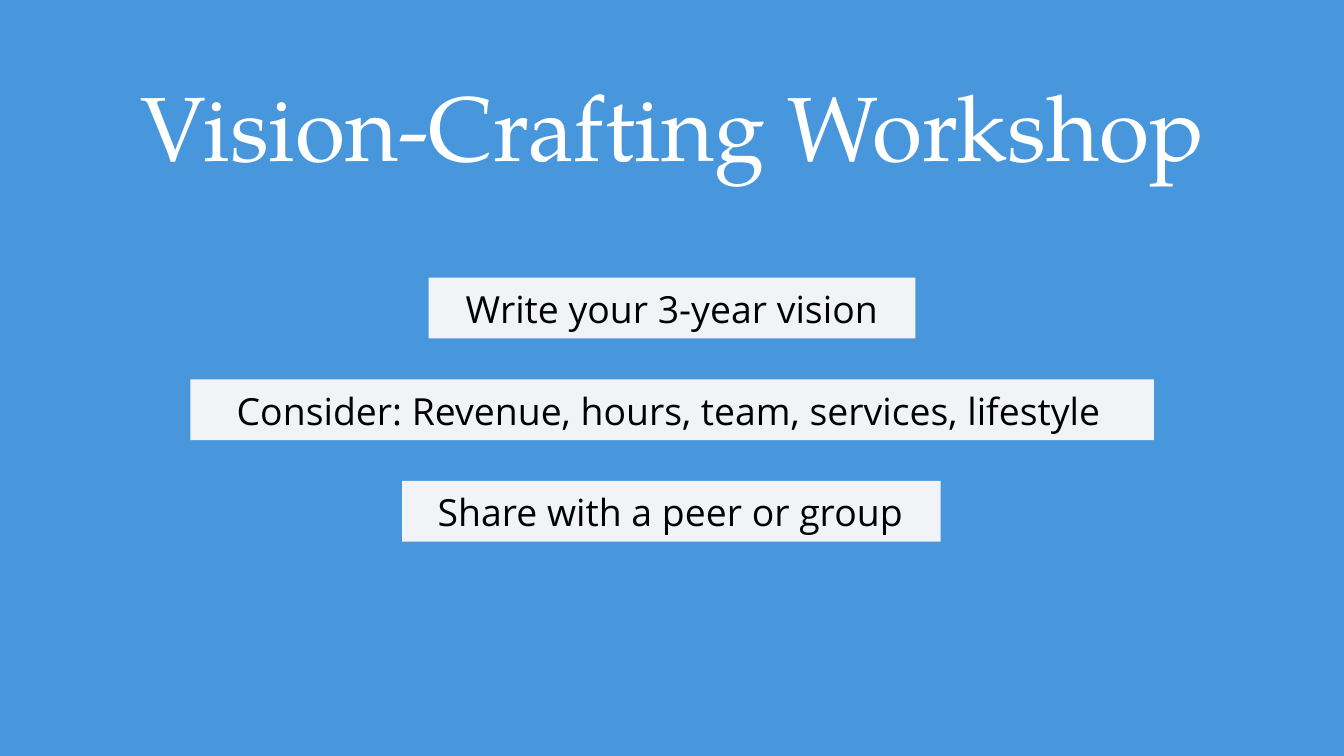
from dataclasses import dataclass

from pptx import Presentation
from pptx import util as u
from pptx.dml.color import RGBColor
from pptx.enum import shapes, text


@dataclass(frozen=True)
class Theme:
    blue: RGBColor = RGBColor(0x48, 0x97, 0xDD)
    bar: RGBColor = RGBColor(0xF1, 0xF3, 0xF7)
    white: RGBColor = RGBColor(0xFF, 0xFF, 0xFF)
    black: RGBColor = RGBColor(0, 0, 0)
    title_font: str = "TeX Gyre Pagella"
    body_font: str = "Open Sans"
    title_size: int = 49
    body_size: float = 20


THEME = Theme()
TITLE_STYLE = {"name": THEME.title_font, "size": u.Pt(THEME.title_size)}
BODY_STYLE = {"name": THEME.body_font, "size": u.Pt(THEME.body_size)}

BAR_TOP, BAR_PITCH, BAR_HEIGHT = 5.25, 1.92, 1.15
LABEL_OFFSET, LABEL_HEIGHT = 0.19, 0.79

# Each step: wording, (bar left, bar width), (label left, label width)
STEPS = [
    ("Write your 3-year vision", (8.1, 9.2), (7.77, 9.86)),
    ("Consider: Revenue, hours, team, services, lifestyle", (3.6, 18.21), (3.6, 18.08)),
    ("Share with a peer or group", (7.6, 10.18), (5.42, 14.5)),
]


def add_rectangle(slide, left, top, width, height, color):
    shape = slide.shapes.add_shape(
        shapes.MSO_SHAPE.RECTANGLE, *map(u.Cm, (left, top, width, height)))
    shape.shadow.inherit = False
    shape.fill.solid()
    shape.fill.fore_color.rgb = color
    shape.line.fill.background()


def add_centred_text(slide, left, top, width, height, words, style, color, anchor):
    box = slide.shapes.add_textbox(*map(u.Cm, (left, top, width, height)))
    frame = box.text_frame
    frame_format = {"word_wrap": True, "vertical_anchor": anchor}
    for side in ("left", "top", "right", "bottom"):
        frame_format[f"margin_{side}"] = u.Cm(0.25)
    for name, value in frame_format.items():
        setattr(frame, name, value)
    paragraph = frame.paragraphs[0]
    paragraph.alignment = text.PP_ALIGN.CENTER
    run = paragraph.add_run()
    run.text = words
    for name, value in style.items():
        setattr(run.font, name, value)
    run.font.color.rgb = color


def add_steps(slide):
    for index, (words, (bar_left, bar_width), (label_left, label_width)) in enumerate(STEPS):
        top = BAR_TOP + index * BAR_PITCH
        add_rectangle(slide, bar_left, top, bar_width, BAR_HEIGHT, THEME.bar)
        add_centred_text(slide, label_left, top + LABEL_OFFSET, label_width, LABEL_HEIGHT,
                         words, BODY_STYLE, THEME.black, text.MSO_ANCHOR.MIDDLE)


def main():
    presentation = Presentation()
    presentation.slide_width = u.Cm(25.4)
    presentation.slide_height = u.Cm(14.29)
    slide = presentation.slides.add_slide(presentation.slide_layouts[6])
    add_rectangle(slide, -0.1, 0, 25.58, 14.29, THEME.blue)
    add_centred_text(slide, 1.47, 1.07, 22.48, 2.46, "Vision-Crafting Workshop",
                     TITLE_STYLE, THEME.white, text.MSO_ANCHOR.TOP)
    add_steps(slide)
    presentation.save("out.pptx")


if __name__ == "__main__":
    main()
